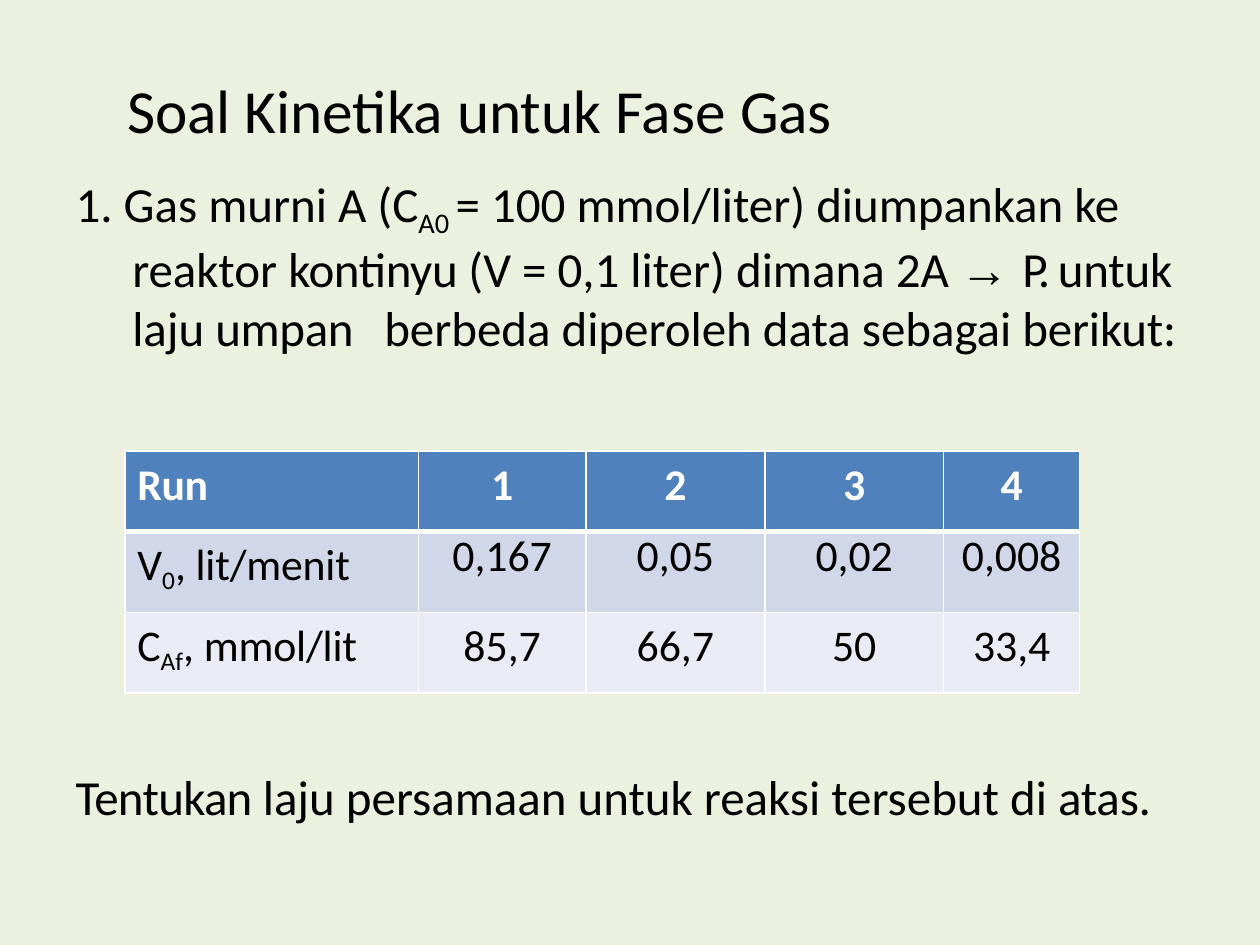
from dataclasses import dataclass
from itertools import product

from lxml.etree import SubElement
from pptx import Presentation
from pptx.dml.color import RGBColor
from pptx.enum.text import PP_ALIGN
from pptx.oxml.ns import qn
from pptx.slide import Slide
from pptx.util import Inches, Pt

CREAM = RGBColor(0xEB, 0xF1, 0xDE)
BLACK = RGBColor(0x00, 0x00, 0x00)
WHITE = RGBColor(0xFF, 0xFF, 0xFF)
BLUE = RGBColor(0x4F, 0x81, 0xBC)
PALE_BLUE = RGBColor(0xD0, 0xD7, 0xE8)
LIGHT_BLUE = RGBColor(0xE9, 0xEC, 0xF4)

COLUMNS, ROWS = 100, 75


@dataclass
class Span:
    text: str
    spacing: float = 0
    baseline: int = 0
    font: str = "Calibri"


TITLE = [Span("Soal Kinetika untuk Fase "), Span("Gas", -0.2)]
PROBLEM = [
    Span("1. Gas murni A (C"),
    Span("A0 ", baseline=-21),
    Span("= 100 mmol/liter) diumpankan "),
    Span("ke ", -0.2),
    Span("reaktor "),
    Span("kontinyu ", -0.2),
    Span("(V = 0,1 liter) dimana 2A "),
    Span("→ ", font="Arial"),
    Span("P. ", -2),
    Span("untuk ", -0.1),
    Span("laju "),
    Span("umpan", -0.2),
    Span("\tberbeda diperoleh data sebagai "),
    Span("berikut:", -0.1),
]
QUESTION = [
    Span("Tentukan ", -0.4),
    Span("laju persamaan untuk reaksi tersebut di "),
    Span("atas.", -0.1),
]
RUN_TABLE = [
    [[Span("Run", -0.2)], "1", "2", "3", "4"],
    [[Span("V"), Span("0", baseline=-20), Span(","), Span(" lit/menit", -0.1)],
     "0,167", "0,05", "0,02", "0,008"],
    [[Span("C"), Span("Af", baseline=-20), Span(", "), Span("mmol/lit", -0.1)],
     "85,7", "66,7", "50", "33,4"],
]
ROW_FILLS = [BLUE, PALE_BLUE, LIGHT_BLUE]


@dataclass
class SlideBuilder:
    """Style and current slide, with lengths in grid columns and rows."""

    deck: Presentation
    page: Slide
    text_color: RGBColor = BLACK
    body_size: float = 28
    cell_size: float = 25

    def across(self, columns):
        return round(self.deck.slide_width * columns / COLUMNS)

    def down(self, rows):
        return round(self.deck.slide_height * rows / ROWS)

    def background(self, color):
        fill = self.page.background.fill
        fill.solid()
        fill.fore_color.rgb = color

    def add_spans(self, para, spans, size, color, bold=False):
        for span in spans:
            run = para.add_run()
            run.text = span.text
            run.font.name = span.font
            run.font.size = Pt(size)
            run.font.bold = bold
            run.font.color.rgb = color
            properties = run.font._element
            if span.spacing:
                properties.set("spc", str(round(span.spacing * 100)))
            if span.baseline:
                properties.set("baseline", str(span.baseline * 1000))

    def indent(self, para, left, first=0):
        properties = para._p.get_or_add_pPr()
        properties.set("marL", str(self.across(left)))
        properties.set("indent", str(self.across(first)))
        return properties

    def text(self, spans, left, top, width, height, size=None, inset=0.2,
             margin=0, hanging=0, tab=None):
        box = self.page.shapes.add_textbox(
            self.across(left), self.down(top), self.across(width), self.down(height))
        frame = box.text_frame
        frame.word_wrap = True
        frame.margin_left = frame.margin_right = frame.margin_bottom = 0
        frame.margin_top = self.down(inset)
        para = frame.paragraphs[0]
        properties = self.indent(para, margin, -hanging)
        if tab:
            tabs = SubElement(properties, qn("a:tabLst"))
            SubElement(tabs, qn("a:tab"), pos=str(self.across(tab)), algn="l")
        self.add_spans(para, spans, size or self.body_size, self.text_color)

    def borders(self, cell, **widths):
        properties = cell._tc.get_or_add_tcPr()
        for side in "LRTB":
            line = SubElement(properties, qn(f"a:ln{side}"), w=str(Pt(widths.get(side, 1))))
            fill = SubElement(line, qn("a:solidFill"))
            SubElement(fill, qn("a:srgbClr"), val=str(WHITE))

    def table(self, content, fills, left, top, column_widths, row_height):
        height = row_height * len(content)
        table = self.page.shapes.add_table(
            len(content), len(column_widths), self.across(left), self.down(top),
            self.across(sum(column_widths)), self.down(height)).table
        table.horz_banding = False
        for column, width in zip(table.columns, column_widths):
            column.width = self.across(width)
        for row in table.rows:
            row.height = self.down(row_height)
        for row, column in product(range(len(content)), range(len(column_widths))):
            self.cell(table.cell(row, column), content[row][column], fills[row], row, column)

    def cell(self, cell, value, fill, row, column):
        header, label = row == 0, column == 0
        tight = row == 1 and not label
        self.borders(cell, T=3 if row == 1 else 1, B=3 if header else 1)
        cell.fill.solid()
        cell.fill.fore_color.rgb = fill
        cell.margin_left = cell.margin_right = cell.margin_bottom = 0
        cell.margin_top = 0 if tight else self.down(0.6)
        para = cell.text_frame.paragraphs[0]
        if label:
            self.indent(para, 1)
        else:
            para.alignment = PP_ALIGN.CENTER
        if tight:
            para.line_spacing = Pt(29.4)
        self.add_spans(para, value if label else [Span(value)], self.cell_size,
                       WHITE if header else self.text_color, header)


def main():
    deck = Presentation()
    deck.slide_width, deck.slide_height = Inches(10), Inches(7.5)
    page = deck.slides.add_slide(deck.slide_layouts[6])
    builder = SlideBuilder(deck, page)
    builder.background(CREAM)
    builder.text(TITLE, 7.6, 2.4, 83.5, 9.2, size=35, inset=3.3, margin=2.5)
    builder.text(PROBLEM, 5.6, 13.6, 89.4, 19, margin=4.9, hanging=4.5, tab=19.9)
    builder.table(RUN_TABLE, ROW_FILLS, 9.9, 35.8, [23.3, 13.3, 14.2, 14.2, 10.8], 6.4)
    builder.text(QUESTION, 5.9, 60.6, 86.3, 4.9, margin=0.1)
    deck.save("out.pptx")


if __name__ == "__main__":
    main()
